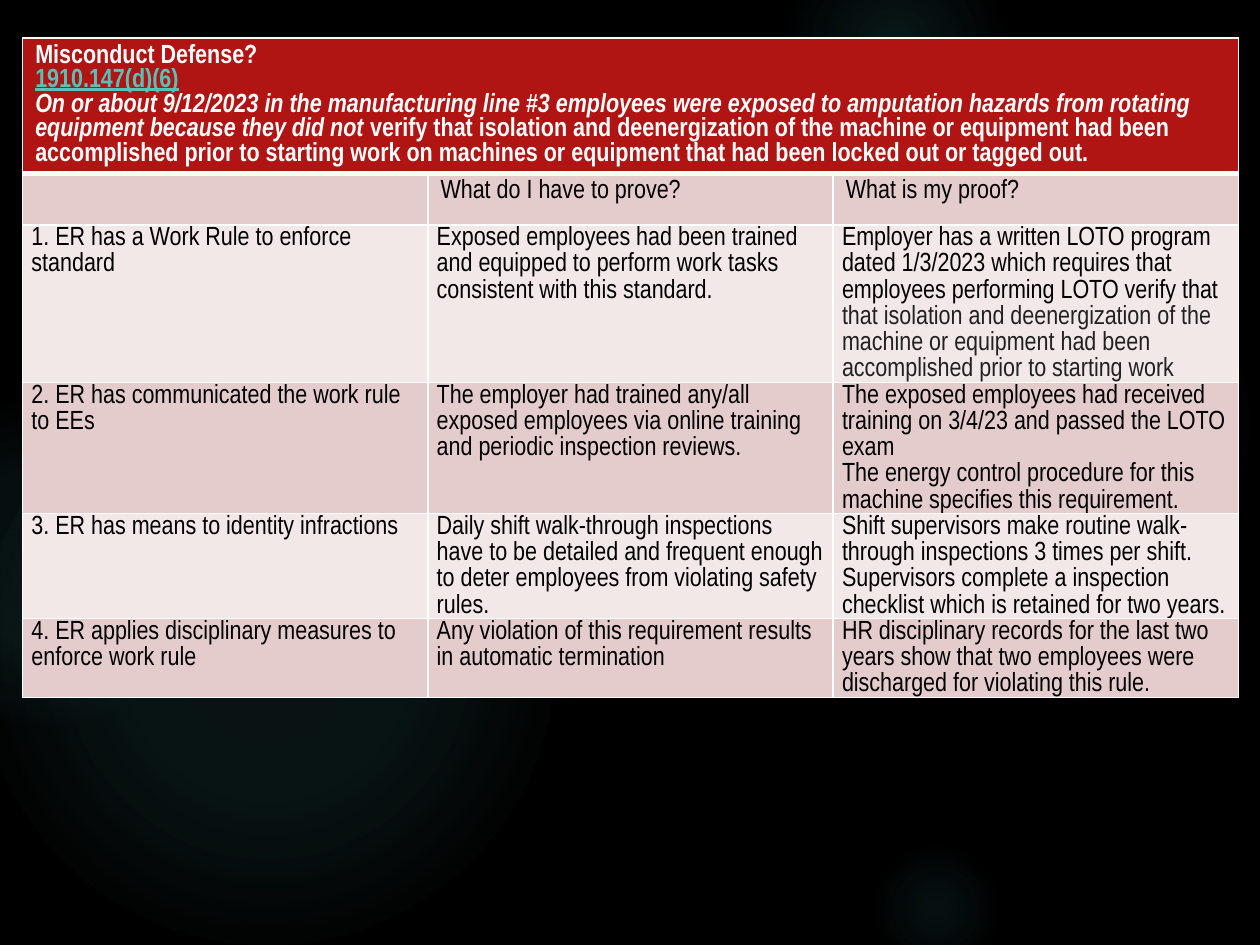
from dataclasses import dataclass

from lxml import etree
from pptx import Presentation, util as u
from pptx.dml.color import RGBColor
from pptx.enum import shapes
from pptx.oxml import parse_xml

NS = "http://schemas.openxmlformats.org/drawingml/2006/main"


@dataclass
class Theme:
    font: str = "Arial Narrow"
    size: float = 15
    back: str = "000000"
    glow: str = "50B9C1"
    header: str = "B01513"
    bands: tuple = ("E4CCCC", "F2E8E7")
    white: str = "FFFFFF"
    black: str = "000000"
    soft: str = "212121"
    link: str = "58C1BA"


T = Theme()


def add_run(p, words, color, **style):
    r = p.add_run()
    r.text = words
    r.font.name, r.font.size = T.font, u.Pt(T.size)
    r.font.color.rgb = RGBColor.from_string(color)
    for name, value in style.items():
        setattr(r.font, name, value)


def set_cell(cell, fill, bottom=1):
    """Fill the cell and rule its four sides in white; bottom is in points."""
    cell.fill.solid()
    cell.fill.fore_color.rgb = RGBColor.from_string(fill)
    tcPr = cell._tc.get_or_add_tcPr()
    for i, (side, width) in enumerate(zip("LRTB", (1, 1, 1, bottom))):
        tcPr.insert(i, parse_xml(
            f'<a:ln{side} xmlns:a="{NS}" w="{u.Pt(width)}"><a:solidFill>'
            f'<a:srgbClr val="{T.white}"/></a:solidFill></a:ln{side}>'))


prs = Presentation()
prs.slide_width, prs.slide_height = u.Inches(10), u.Inches(7.5)
s = prs.slides.add_slide(prs.slide_layouts[6])
s.background.fill.solid()
s.background.fill.fore_color.rgb = RGBColor.from_string(T.back)

# Soft glows: left, top, diameter, then (position, opacity) stops in percent
glows = [
    (6.89, 1.83, 3.08, ((0, 7), (36, 6), (69, 0))),
    (6.22, -0.5, 1.75, ((0, 14), (36, 7), (73, 0))),
    (6.89, 6.67, 1.08, ((0, 9), (36, 5), (66, 0))),
    (-0.17, 2.92, 4.58, ((0, 11), (36, 10), (75, 0))),
    (-0.92, 3.17, 2.58, ((0, 8), (36, 8), (72, 0))),
]
for left, top, size, stops in glows:
    sp = s.shapes.add_shape(shapes.MSO_SHAPE.OVAL, u.Inches(left), u.Inches(top),
                            u.Inches(size), u.Inches(size))
    sp.shadow.inherit = False
    sp.line.fill.background()
    sp.fill.gradient()
    grad = sp._element.spPr.find(f"{{{NS}}}gradFill")
    for child in list(grad):
        grad.remove(child)
    gs_list = etree.SubElement(grad, f"{{{NS}}}gsLst")
    for pos, alpha in stops:
        gs = etree.SubElement(gs_list, f"{{{NS}}}gs", pos=str(pos * 1000))
        clr = etree.SubElement(gs, f"{{{NS}}}srgbClr", val=T.glow)
        etree.SubElement(clr, f"{{{NS}}}alpha", val=str(alpha * 1000))
    circle = etree.SubElement(grad, f"{{{NS}}}path", path="circle")
    etree.SubElement(circle, f"{{{NS}}}fillToRect", l="50000", t="50000", r="50000", b="50000")

# Each cell is a list of paragraphs, each paragraph a list of (words, colour) runs
K = T.black
body = [
    [[],
     [[("What do I have to prove?", K)]],
     [[("What is my proof?", K)]]],
    [[[("1. ER has a Work Rule to enforce standard", K)]],
     [[("Exposed employees had been trained and equipped to perform work tasks "
        "consistent with this standard.", K)]],
     [[("Employer has a written LOTO program dated 1/3/2023 which requires that "
        "employees performing LOTO verify that ", K),
       ("that isolation and deenergization of the machine or equipment had been "
        "accomplished prior to starting work", T.soft)]]],
    [[[("2. ER has communicated the work rule to EEs", K)]],
     [[("The employer had trained any/all exposed employees via online training "
        "and periodic inspection reviews.", K)]],
     [[("The exposed employees had received training on 3/4/23 and passed the "
        "LOTO exam", K)],
      [("The energy control procedure for this machine specifies this "
        "requirement.", K)]]],
    [[[("3. ER has means to identity infractions", K)]],
     [[("Daily shift walk-through inspections have to be detailed and frequent "
        "enough to deter employees from violating safety rules.", K)]],
     [[("Shift supervisors make routine walk-through inspections 3 times per "
        "shift. Supervisors complete a inspection checklist which is retained "
        "for two years.", K)]]],
    [[[("4. ER applies disciplinary measures to enforce work rule", K)]],
     [[("Any violation of this requirement results in automatic termination", K)]],
     [[("HR disciplinary records for the last two years show that two employees "
        "were discharged for violating this rule.", K)]]],
]

COLS = 3
heights = [0.63, 0.41] + [0.45] * 4
table = s.shapes.add_table(len(heights), COLS, u.Inches(0.18), u.Inches(0.3),
                           u.Inches(9.65), u.Inches(sum(heights))).table
for row, height in zip(table.rows, heights):
    row.height = u.Inches(height)

# Header across all columns
for cell in table.rows[0].cells:
    set_cell(cell, T.header, bottom=3)
head = table.cell(0, 0)
head.merge(table.cell(0, COLS - 1))
tf = head.text_frame
add_run(tf.paragraphs[0], "Misconduct Defense?", T.white, bold=True)
add_run(tf.add_paragraph(), "1910.147(d)(6)", T.link, bold=True, underline=True)
p = tf.add_paragraph()
add_run(p, "On or about 9/12/2023 in the manufacturing line #3 employees were exposed to "
        "amputation hazards from rotating equipment because they did not ",
        T.white, bold=True, italic=True)
add_run(p, "verify that isolation and deenergization of the machine or equipment had been "
        "accomplished prior to starting work on machines or equipment that had been "
        "locked out or tagged out.", T.white, bold=True)

# Column titles, then the four elements of the defense
for i, row in enumerate(body):
    for j, paragraphs in enumerate(row):
        cell = table.cell(i + 1, j)
        set_cell(cell, T.bands[i % 2])
        if i:
            cell.margin_left = cell.margin_right = u.Inches(0.07)
            cell.margin_top = cell.margin_bottom = 0
        tf = cell.text_frame
        for n, runs in enumerate(paragraphs):
            p = tf.add_paragraph() if n else tf.paragraphs[0]
            if i:
                p.line_spacing = 1.07
            for words, color in runs:
                add_run(p, words, color, bold=False)

prs.save("out.pptx")
